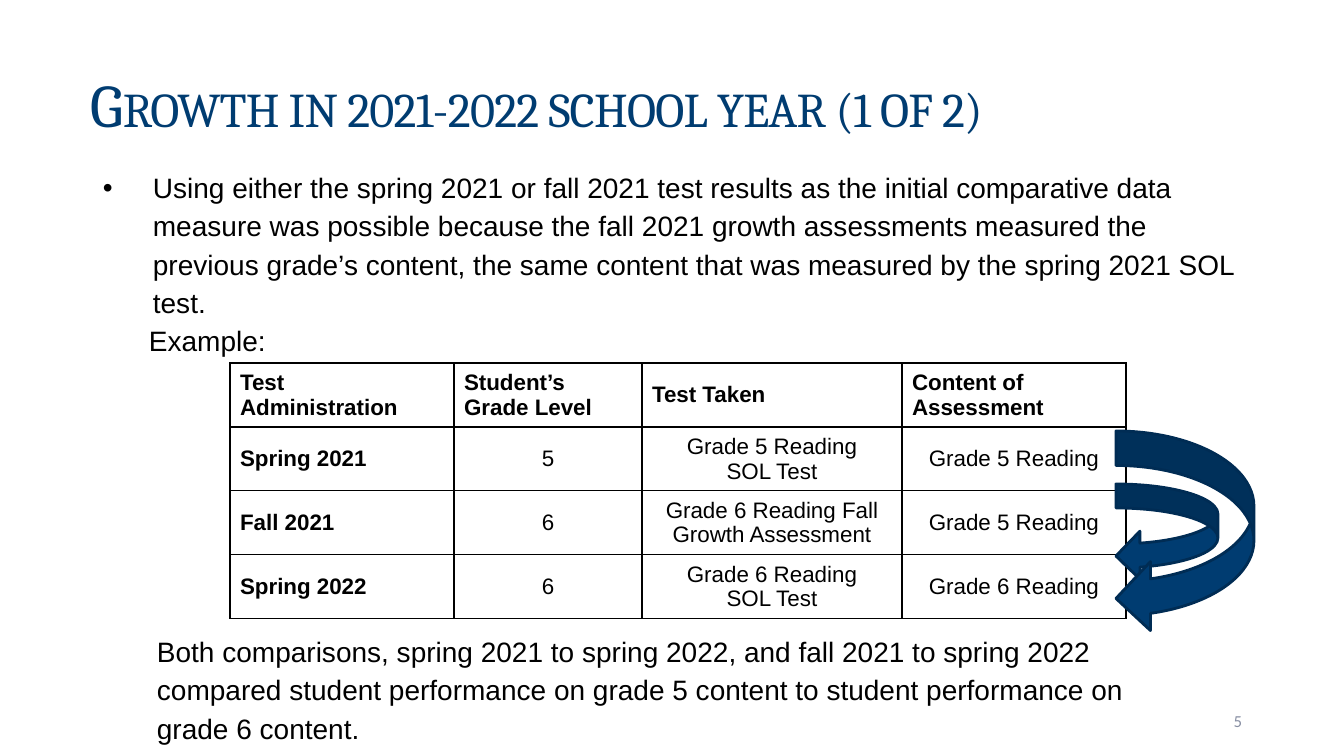
from lxml.etree import SubElement
from pptx import Presentation
from pptx.dml.color import RGBColor
from pptx.enum.shapes import MSO_SHAPE
from pptx.enum.text import MSO_ANCHOR, MSO_AUTO_SIZE, PP_ALIGN
from pptx.oxml.ns import qn
from pptx.util import Emu, Pt

NAVY, DARK_NAVY, BLACK, GREY = "003C71", "002C54", "000000", "888FA3"
HEADER = ["Test Administration", "Student’s Grade Level", "Test Taken",
          "Content of Assessment"]
TESTS = [
    ["Spring 2021", "5", "Grade 5 Reading\nSOL Test", "Grade 5 Reading"],
    ["Fall 2021", "6", "Grade 6 Reading Fall Growth Assessment", "Grade 5 Reading"],
    ["Spring 2022", "6", "Grade 6 Reading\nSOL Test", "Grade 6 Reading"],
]
COLUMN_WIDTHS = [224, 188, 260, 224]
ROW_HEIGHTS = [64, 60, 64, 60]


def px(length):
    return Emu(round(length * 914400 / 100.8))


def colour(hex_string):
    return RGBColor.from_string(hex_string)


def style(paragraph, size, font_name, hex_string, bold=False,
          align=PP_ALIGN.LEFT, spacing=None):
    font = paragraph.font
    font.size, font.name, font.bold = Pt(size), font_name, bold
    font.color.rgb = colour(hex_string)
    paragraph.alignment = align
    if spacing:
        paragraph.line_spacing = spacing


def text_frame(slide, box):
    frame = slide.shapes.add_textbox(*map(px, box)).text_frame
    frame.word_wrap = True
    return frame


# Title
def add_title(slide, box):
    title = slide.shapes.title
    title.left, title.top, title.width, title.height = map(px, box)
    frame = title.text_frame
    frame.text = "Growth in 2021-2022 school year (1 of 2)"
    frame.auto_size = MSO_AUTO_SIZE.NONE
    frame.vertical_anchor = MSO_ANCHOR.BOTTOM
    frame.margin_left = px(91)
    heading = frame.paragraphs[0]
    style(heading, 43.2, "Cambria", NAVY, spacing=0.9)
    run_properties = heading.runs[0].font._element
    run_properties.set("cap", "small")
    run_properties.set("spc", "-50")


# Bulleted explanation and the lead-in to the table
def add_explanation(slide, box):
    frame = text_frame(slide, box)
    frame.text = (
        "Using either the spring 2021 or fall 2021 test results as the initial "
        "comparative data measure was possible because the fall 2021 growth "
        "assessments measured the previous grade’s content, the same content "
        "that was measured by the spring 2021 SOL test.\nExample:")
    reason, lead_in = frame.paragraphs
    for paragraph, margin in ((reason, 50), (lead_in, 46)):
        style(paragraph, 20, "Arial", BLACK, spacing=1.14)
        paragraph._p.get_or_add_pPr().set("marL", str(px(margin)))
    properties = reason._p.get_or_add_pPr()
    properties.set("indent", str(-px(50)))
    SubElement(properties, qn("a:buFont"), typeface="Arial")
    SubElement(properties, qn("a:buChar"), char="•")


# Table of test administrations
def border_cell(cell):
    properties = cell._tc.get_or_add_tcPr()
    for position, side in enumerate(("a:lnL", "a:lnR", "a:lnT", "a:lnB")):
        border = properties.makeelement(qn(side), {"w": str(Pt(1))})
        properties.insert(position, border)
        fill = SubElement(border, qn("a:solidFill"))
        SubElement(fill, qn("a:srgbClr"), val=BLACK)


def add_tests_table(slide, left, top):
    rows = [HEADER] + TESTS
    table = slide.shapes.add_table(
        len(rows), len(HEADER), px(left), px(top),
        px(sum(COLUMN_WIDTHS)), px(sum(ROW_HEIGHTS))).table
    table.horz_banding = False
    for column, width in zip(table.columns, COLUMN_WIDTHS):
        column.width = px(width)
    for r, (row, height) in enumerate(zip(rows, ROW_HEIGHTS)):
        table.rows[r].height = px(height)
        for c, wording in enumerate(row):
            cell = table.cell(r, c)
            cell.text = wording
            cell.vertical_anchor = MSO_ANCHOR.MIDDLE
            cell.fill.background()
            border_cell(cell)
            label = r == 0 or c == 0
            for paragraph in cell.text_frame.paragraphs:
                style(paragraph, 16, "Arial", BLACK, label,
                      PP_ALIGN.LEFT if label else PP_ALIGN.CENTER)


# Conclusion below the table
def add_conclusion(slide, box):
    frame = text_frame(slide, box)
    frame.text = (
        "Both comparisons, spring 2021 to spring 2022, and fall 2021 to spring "
        "2022 compared student performance on grade 5 content to student "
        "performance on grade 6 content.")
    style(frame.paragraphs[0], 20, "Arial", BLACK, spacing=1.14)


# Curved arrows: fall to spring 2022, then spring to spring
def add_comparison_arrows(slide, left, top):
    arrows = slide.shapes.add_group_shape()
    for drop, width, height in ((53, 102, 96), (0, 138, 202)):
        arrow = arrows.shapes.add_shape(
            MSO_SHAPE.CURVED_LEFT_ARROW, px(left), px(top + drop),
            px(width), px(height))
        arrow.shadow.inherit = False
        arrow.fill.solid()
        arrow.fill.fore_color.rgb = colour(NAVY)
        arrow.line.color.rgb = colour(DARK_NAVY)
        arrow.line.width = Pt(2)


# Slide number
def add_slide_number(slide, box):
    frame = text_frame(slide, box)
    frame.vertical_anchor = MSO_ANCHOR.MIDDLE
    number = frame.paragraphs[0]
    number.text = "5"
    style(number, 12, "Calibri", GREY, align=PP_ALIGN.RIGHT)


def main():
    presentation = Presentation()
    presentation.slide_width, presentation.slide_height = px(1344), px(756)
    slide = presentation.slides.add_slide(presentation.slide_layouts[5])
    add_title(slide, (0, 0, 1344, 146))
    add_explanation(slide, (93, 161, 1159, 520))
    add_slide_number(slide, (950, 701, 302, 40))
    add_tests_table(slide, 230, 363)
    add_conclusion(slide, (147, 625, 1049, 131))
    add_comparison_arrows(slide, 1116, 431)
    presentation.save("out.pptx")


if __name__ == "__main__":
    main()
